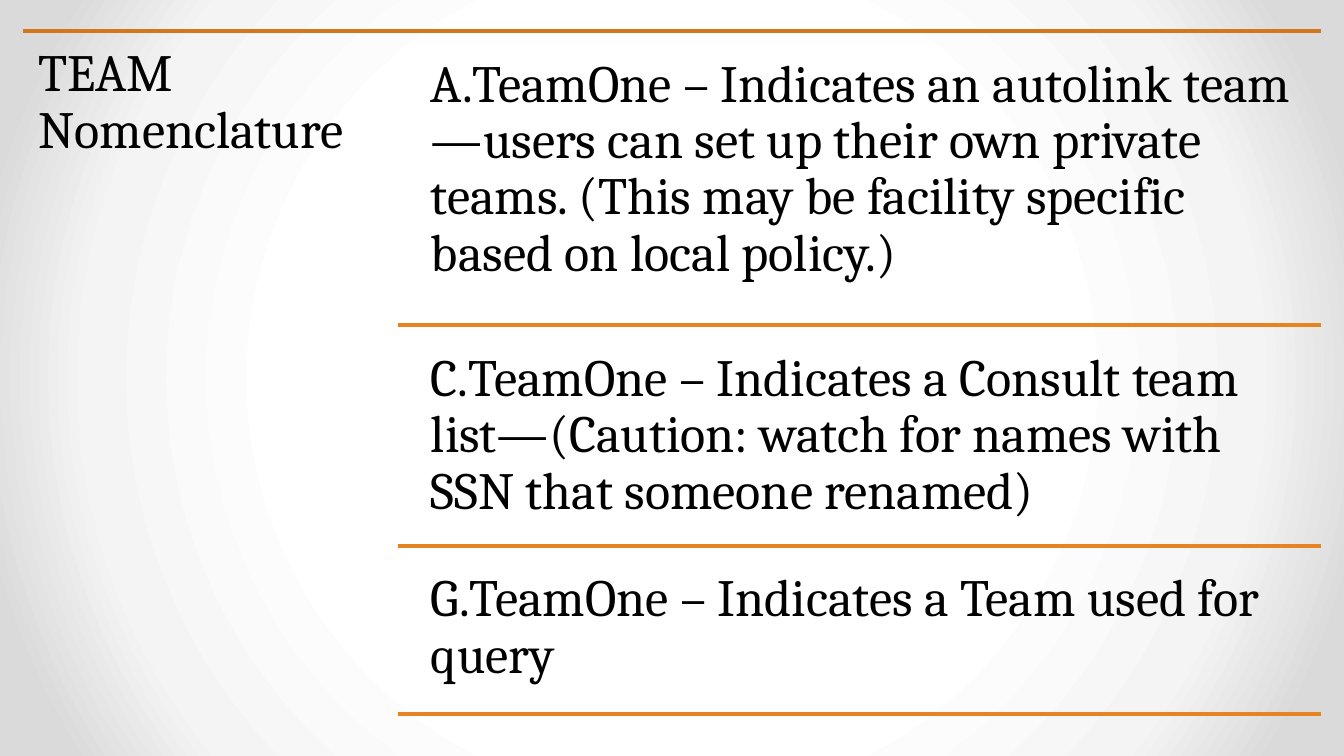
from dataclasses import dataclass
from itertools import pairwise

from pptx import Presentation
from pptx.dml.color import RGBColor
from pptx.enum.shapes import MSO_CONNECTOR as Connector
from pptx.enum.text import MSO_ANCHOR as Anchor, MSO_AUTO_SIZE as AutoSize
from pptx.oxml import parse_xml
from pptx.oxml.ns import nsdecls, qn
from pptx.util import Pt


@dataclass(frozen=True)
class Theme:
    font: str = "Cambria"
    text_size: float = 28
    text_color: str = "000000"
    heading_rule: str = "D1781F"
    row_rule: str = "E68422"
    rule_width: float = 2.25
    backdrop: tuple = ((50, "FFFFFF"), (76, "F4F4F4"), (92, "DADADA"))


THEME = Theme()
LEFT, RIGHT = 12.24, 707.76
ROW_LEFT, TEXT_LEFT = 213.12, 222.48
HEADING_WIDTH, HEADING_HEIGHT = 201.6, 371.52
ROW_GAP = 5.5
RULE_TOPS = (16.56, 174.24, 292.32, 382.32)
TEAM_TYPES = (
    "A.TeamOne – Indicates an autolink team—users can set up their own private teams. "
    "(This may be facility specific based on local policy.)",
    "C.TeamOne – Indicates a Consult team list—(Caution: watch for names with SSN "
    "that someone renamed)",
    "G.TeamOne – Indicates a Team used for query",
)


def apply_format(target, values):
    for name, value in values.items():
        setattr(target, name, value)


def paint_background(slide):
    slide.background.fill.gradient()
    gradient = next(slide.element.iter(qn("a:gradFill")))
    stops = "".join(
        f'<a:gs pos="{position * 1000}"><a:srgbClr val="{color}"/></a:gs>'
        for position, color in THEME.backdrop
    )
    radial = parse_xml(
        f'<a:gradFill {nsdecls("a")} rotWithShape="1"><a:gsLst>{stops}</a:gsLst>'
        '<a:path path="circle"><a:fillToRect l="50000" t="50000" r="50000" b="50000"/>'
        "</a:path></a:gradFill>"
    )
    gradient.getparent().replace(gradient, radial)


def add_rule(slide, left, top, color):
    rule = slide.shapes.add_connector(
        Connector.STRAIGHT, Pt(left), Pt(top), Pt(RIGHT), Pt(top)
    )
    rule.line.width = Pt(THEME.rule_width)
    rule.line.color.rgb = RGBColor.from_string(color)
    rule._element.spPr.append(parse_xml(f'<a:effectLst {nsdecls("a")}/>'))


def add_text(slide, text, left, top, width, height):
    box = slide.shapes.add_textbox(Pt(left), Pt(top), Pt(width), Pt(height))
    frame = box.text_frame
    margins = {f"margin_{side}": Pt(8.4) for side in ("left", "top", "right", "bottom")}
    apply_format(frame, {
        "word_wrap": True,
        "auto_size": AutoSize.NONE,
        "vertical_anchor": Anchor.TOP,
        **margins,
    })
    paragraph = frame.paragraphs[0]
    apply_format(paragraph, {"line_spacing": 0.9, "space_after": Pt(10)})
    run = paragraph.add_run()
    run.text = text
    apply_format(run.font, {"name": THEME.font, "size": Pt(THEME.text_size)})
    run.font.color.rgb = RGBColor.from_string(THEME.text_color)


def main():
    presentation = Presentation()
    apply_format(presentation, {"slide_width": Pt(720), "slide_height": Pt(405)})
    slide = presentation.slides.add_slide(presentation.slide_layouts[6])
    paint_background(slide)

    add_rule(slide, LEFT, RULE_TOPS[0], THEME.heading_rule)
    add_text(slide, "TEAM Nomenclature", LEFT, RULE_TOPS[0], HEADING_WIDTH, HEADING_HEIGHT)

    for text, (above, below) in zip(TEAM_TYPES, pairwise(RULE_TOPS)):
        top = above + ROW_GAP
        add_text(slide, text, TEXT_LEFT, top, RIGHT - TEXT_LEFT, below - top)
        add_rule(slide, ROW_LEFT, below, THEME.row_rule)

    presentation.save("out.pptx")


if __name__ == "__main__":
    main()
